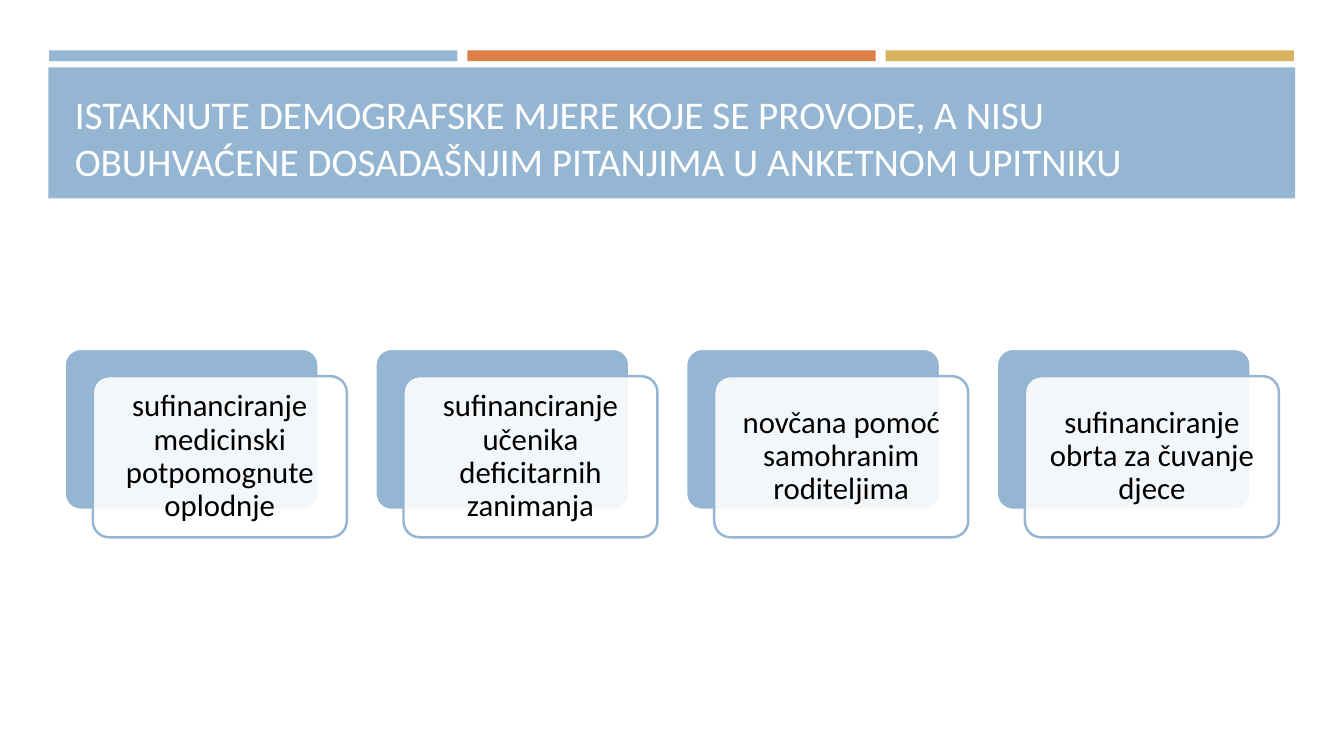
from lxml.etree import SubElement
from pptx import Presentation
from pptx.dml.color import RGBColor
from pptx.enum.shapes import MSO_SHAPE
from pptx.enum.text import MSO_ANCHOR, MSO_AUTO_SIZE, PP_ALIGN
from pptx.oxml.ns import qn
from pptx.util import Cm, Pt

TITLE = ("ISTAKNUTE DEMOGRAFSKE MJERE KOJE SE PROVODE, A NISU "
         "OBUHVAĆENE DOSADAŠNJIM PITANJIMA U ANKETNOM UPITNIKU")
MEASURES = [
    "sufinanciranje medicinski potpomognute oplodnje",
    "sufinanciranje učenika deficitarnih zanimanja",
    "novčana pomoć samohranim roditeljima",
    "sufinanciranje obrta za čuvanje djece",
]
COLOURS = {"blue": "94B6D2", "orange": "DD8047", "gold": "D8B25C",
           "white": "FFFFFF", "title": "FFFEFF", "black": "000000"}
BARS = ["blue", "orange", "gold"]

# Lengths in centimetres
BAR_LEFT, BAR_TOP, BAR_WIDTH, BAR_HEIGHT, BAR_STEP = 1.24, 1.27, 10.29, 0.27, 10.54
BAND_BOX = (1.22, 1.7, 31.42, 3.3)
TITLE_BOX = (1.63, 1.96, 30.63, 2.82)
CARD_LEFT, CARD_TOP, CARD_WIDTH, CARD_HEIGHT, CARD_STEP = 1.63, 8.79, 6.4, 4.06, 7.83
FRONT_SHIFT = (0.71, 0.69)
CARD_INSET = Cm(0.23)

TITLE_FRAME = {"word_wrap": True, "auto_size": MSO_AUTO_SIZE.NONE,
               "vertical_anchor": MSO_ANCHOR.BOTTOM}
CARD_FRAME = {"word_wrap": True, "vertical_anchor": MSO_ANCHOR.MIDDLE,
              "margin_left": CARD_INSET, "margin_right": CARD_INSET,
              "margin_top": CARD_INSET, "margin_bottom": CARD_INSET}


def colour(name):
    return RGBColor.from_string(COLOURS[name])


def set_attributes(target, values):
    for name, value in values.items():
        setattr(target, name, value)


def add_box(slide, kind, box, fill, line=None):
    shape = slide.shapes.add_shape(kind, *map(Cm, box))
    shape.shadow.inherit = False
    shape.fill.solid()
    shape.fill.fore_color.rgb = colour(fill)
    if line:
        shape.line.color.rgb = colour(line)
        shape.line.width = Pt(1.75)
    else:
        shape.line.fill.background()
    return shape


def write(shape, text, size, text_colour, frame_format, paragraph_format):
    frame = shape.text_frame
    set_attributes(frame, frame_format)
    frame.text = text
    paragraph = frame.paragraphs[0]
    set_attributes(paragraph, paragraph_format)
    font = paragraph.runs[0].font
    set_attributes(font, {"name": "Calibri", "size": Pt(size)})
    font.color.rgb = colour(text_colour)


def set_opacity(shape, percent):
    solid_colour = shape.fill._xPr.find(qn("a:solidFill"))[0]
    SubElement(solid_colour, qn("a:alpha")).set("val", str(percent * 1000))


def add_card(slide, left, text):
    """Draw a blue card with a translucent text card shifted over it."""
    shift_x, shift_y = FRONT_SHIFT
    size = (CARD_WIDTH, CARD_HEIGHT)
    back = add_box(slide, MSO_SHAPE.ROUNDED_RECTANGLE,
                   (left, CARD_TOP, *size), "blue", "white")
    front = add_box(slide, MSO_SHAPE.ROUNDED_RECTANGLE,
                    (left + shift_x, CARD_TOP + shift_y, *size), "white", "blue")
    for shape in (back, front):
        shape.adjustments[0] = 0.1
    set_opacity(front, 90)
    write(front, text, 22, "black", CARD_FRAME,
          {"alignment": PP_ALIGN.CENTER, "line_spacing": 0.9})


def main():
    presentation = Presentation()
    set_attributes(presentation, {"slide_width": Cm(33.87), "slide_height": Cm(19.05)})
    slide = presentation.slides.add_slide(presentation.slide_layouts[5])

    for index, bar_colour in enumerate(BARS):
        box = (BAR_LEFT + index * BAR_STEP, BAR_TOP, BAR_WIDTH, BAR_HEIGHT)
        add_box(slide, MSO_SHAPE.RECTANGLE, box, bar_colour)
    add_box(slide, MSO_SHAPE.RECTANGLE, BAND_BOX, "blue")

    title = slide.shapes.title
    set_attributes(title, dict(zip(("left", "top", "width", "height"), map(Cm, TITLE_BOX))))
    write(title, TITLE, 28, "title", TITLE_FRAME, {"alignment": PP_ALIGN.LEFT})
    # The title has to lie in front of its band
    slide.shapes._spTree.append(title._element)

    for index, measure in enumerate(MEASURES):
        add_card(slide, CARD_LEFT + index * CARD_STEP, measure)

    presentation.save("out.pptx")


if __name__ == "__main__":
    main()
